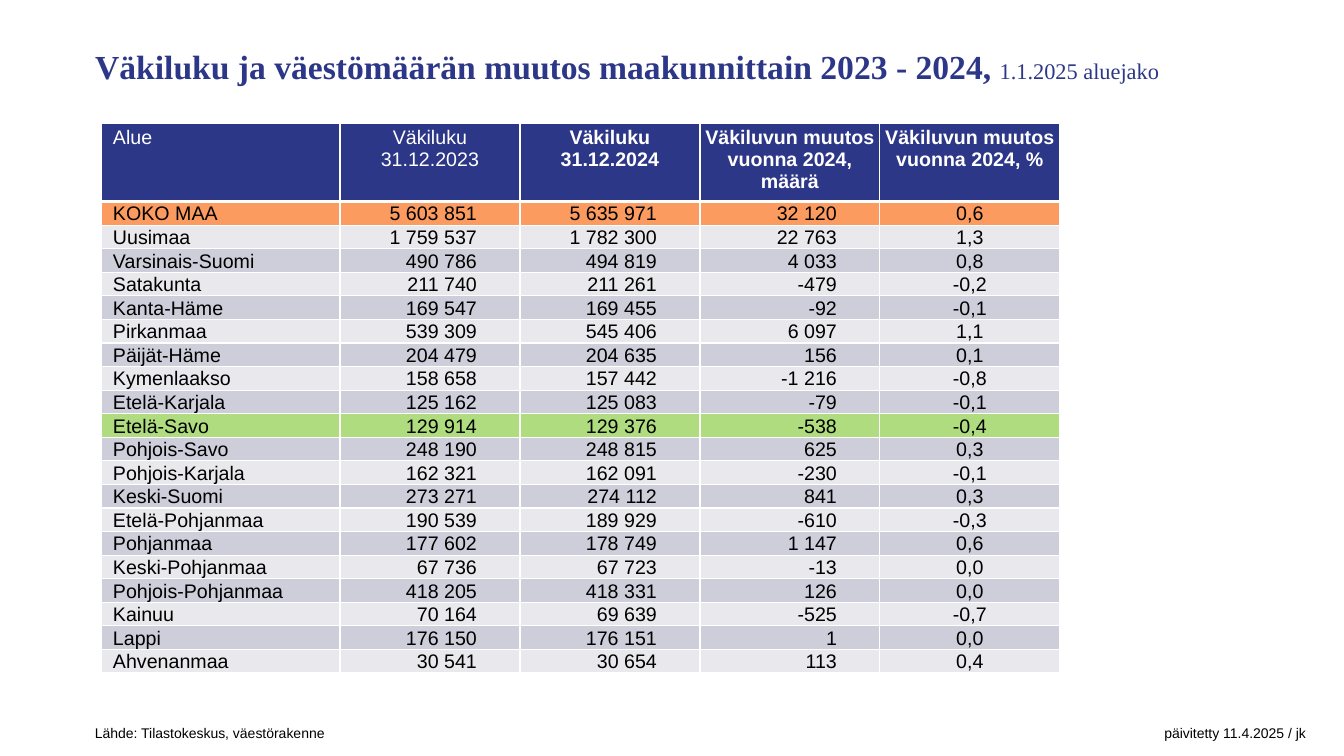
from typing import NamedTuple

from lxml import etree
from pptx import Presentation
from pptx import util as u
from pptx.dml.color import RGBColor
from pptx.enum import text
from pptx.oxml import ns

EMU_PER_PX = 914400 / 100.8
COLORS = {
    "navy": "2D3787", "white": "FFFFFF", "black": "000000",
    "orange": "FC9B60", "green": "AFDC7E", "light": "E8E8ED", "dark": "CDCED9",
}
LEFT, CENTER, RIGHT = text.PP_ALIGN.LEFT, text.PP_ALIGN.CENTER, text.PP_ALIGN.RIGHT


class Style(NamedTuple):
    size: int
    color: str
    bold: bool = False
    font: str = "Arial"


class Column(NamedTuple):
    width: int
    heading: tuple[str, ...]
    heading_bold: bool
    align: text.PP_ALIGN
    inset_left: int
    inset_right: int


class Region(NamedTuple):
    name: str
    population_2023: str
    population_2024: str
    change: str
    percent: str


COLUMNS = [
    Column(239, ("Alue",), False, LEFT, 12, 0),
    Column(180, ("Väkiluku", "31.12.2023"), False, RIGHT, 0, 43),
    Column(180, ("Väkiluku 31.12.2024",), True, RIGHT, 0, 43),
    Column(180, ("Väkiluvun muutos vuonna 2024, määrä",), True, RIGHT, 0, 43),
    Column(180, ("Väkiluvun muutos vuonna 2024, %",), True, CENTER, 0, 0),
]
REGIONS = [
    Region("KOKO MAA", "5 603 851", "5 635 971", "32 120", "0,6"),
    Region("Uusimaa", "1 759 537", "1 782 300", "22 763", "1,3"),
    Region("Varsinais-Suomi", "490 786", "494 819", "4 033", "0,8"),
    Region("Satakunta", "211 740", "211 261", "-479", "-0,2"),
    Region("Kanta-Häme", "169 547", "169 455", "-92", "-0,1"),
    Region("Pirkanmaa", "539 309", "545 406", "6 097", "1,1"),
    Region("Päijät-Häme", "204 479", "204 635", "156", "0,1"),
    Region("Kymenlaakso", "158 658", "157 442", "-1 216", "-0,8"),
    Region("Etelä-Karjala", "125 162", "125 083", "-79", "-0,1"),
    Region("Etelä-Savo", "129 914", "129 376", "-538", "-0,4"),
    Region("Pohjois-Savo", "248 190", "248 815", "625", "0,3"),
    Region("Pohjois-Karjala", "162 321", "162 091", "-230", "-0,1"),
    Region("Keski-Suomi", "273 271", "274 112", "841", "0,3"),
    Region("Etelä-Pohjanmaa", "190 539", "189 929", "-610", "-0,3"),
    Region("Pohjanmaa", "177 602", "178 749", "1 147", "0,6"),
    Region("Keski-Pohjanmaa", "67 736", "67 723", "-13", "0,0"),
    Region("Pohjois-Pohjanmaa", "418 205", "418 331", "126", "0,0"),
    Region("Kainuu", "70 164", "69 639", "-525", "-0,7"),
    Region("Lappi", "176 150", "176 151", "1", "0,0"),
    Region("Ahvenanmaa", "30 541", "30 654", "113", "0,4"),
]
HIGHLIGHTS = {"KOKO MAA": "orange", "Etelä-Savo": "green"}
TABLE_HEIGHT, HEADER_HEIGHT = 549, 78


def px(length: float) -> u.Emu:
    return u.Emu(round(length * EMU_PER_PX))


def rgb(name: str) -> RGBColor:
    return RGBColor.from_string(COLORS[name])


def add_span(para, words: str, style: Style) -> None:
    span = para.add_run()
    span.text = words
    span.font.name = style.font
    span.font.size = u.Pt(style.size)
    span.font.bold = style.bold
    span.font.color.rgb = rgb(style.color)


def add_borders(cell, top: int, bottom: int) -> None:
    properties = cell._tc.get_or_add_tcPr()
    for side, points in (("L", 1), ("R", 1), ("T", top), ("B", bottom)):
        line = etree.SubElement(properties, ns.qn(f"a:ln{side}"), w=str(u.Pt(points)))
        fill = etree.SubElement(line, ns.qn("a:solidFill"))
        etree.SubElement(fill, ns.qn("a:srgbClr"), val=COLORS["white"])


def fill_cell(cell, lines: tuple[str, ...], style: Style, align: text.PP_ALIGN,
              fill: str, insets: tuple[int, int, int]) -> None:
    left, right, vertical = insets
    cell.margin_left, cell.margin_right = px(left), px(right)
    cell.margin_top = cell.margin_bottom = px(vertical)
    cell.fill.solid()
    cell.fill.fore_color.rgb = rgb(fill)
    for index, words in enumerate(lines):
        frame = cell.text_frame
        para = frame.add_paragraph() if index else frame.paragraphs[0]
        para.alignment = align
        add_span(para, words, style)


def add_title(page) -> None:
    box = page.shapes.title
    box.left, box.top, box.width, box.height = px(85), px(39), px(1174), px(55)
    box.text_frame.vertical_anchor = text.MSO_ANCHOR.MIDDLE
    box.text_frame.auto_size = text.MSO_AUTO_SIZE.NONE
    para = box.text_frame.paragraphs[0]
    para.alignment = LEFT
    add_span(para, "Väkiluku ja väestömäärän muutos maakunnittain 2023 - 2024, ",
             Style(24, "navy", True, "Times New Roman"))
    add_span(para, "1.1.2025 aluejako", Style(16, "navy", False, "Times New Roman"))


def add_population_table(page) -> None:
    width = sum(column.width for column in COLUMNS)
    table = page.shapes.add_table(len(REGIONS) + 1, len(COLUMNS), px(101), px(123),
                                  px(width), px(TABLE_HEIGHT)).table
    table.horz_banding = False
    row_height = (TABLE_HEIGHT - HEADER_HEIGHT) / len(REGIONS)
    for index, row in enumerate(table.rows):
        row.height = px(row_height if index else HEADER_HEIGHT)

    # Header row
    for index, column in enumerate(COLUMNS):
        table.columns[index].width = px(column.width)
        cell = table.cell(0, index)
        add_borders(cell, 1, 3)
        fill_cell(cell, column.heading, Style(14, "white", column.heading_bold),
                  CENTER if index else LEFT, "navy", (column.inset_left, 0, 4))

    # Region rows
    for row, region in enumerate(REGIONS, start=1):
        fill = HIGHLIGHTS.get(region.name, "dark" if row % 2 else "light")
        for index, (column, value) in enumerate(zip(COLUMNS, region)):
            cell = table.cell(row, index)
            add_borders(cell, 3 if row == 1 else 1, 1)
            cell.vertical_anchor = text.MSO_ANCHOR.BOTTOM
            fill_cell(cell, (value,), Style(14, "black"), column.align, fill,
                      (column.inset_left, column.inset_right, 0))


def add_source_line(page) -> None:
    box = page.shapes.add_textbox(px(85), px(720), px(1246), px(27))
    box.text_frame.word_wrap = True
    para = box.text_frame.paragraphs[0]
    tabs = etree.SubElement(para._p.get_or_add_pPr(), ns.qn("a:tabLst"))
    etree.SubElement(tabs, ns.qn("a:tab"), pos=str(px(1211)), algn="r")
    add_span(para, "Lähde: Tilastokeskus, väestörakenne\tpäivitetty 11.4.2025 / jk",
             Style(10, "black"))


def main() -> None:
    deck = Presentation()
    deck.slide_width, deck.slide_height = px(1344), px(756)
    page = deck.slides.add_slide(deck.slide_layouts[5])
    add_title(page)
    add_source_line(page)
    add_population_table(page)
    deck.save("out.pptx")


if __name__ == "__main__":
    main()
